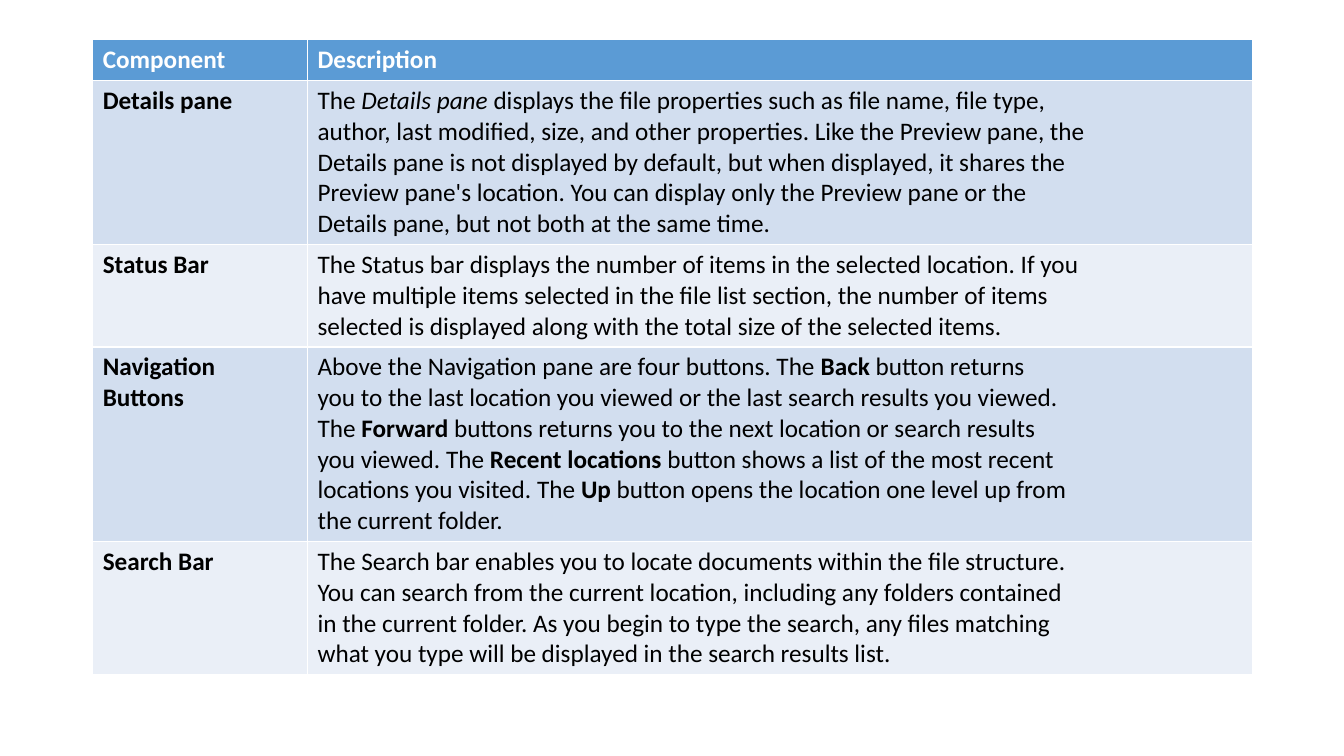
"""Build a slide with a table describing the components of a file window."""
import pptx
import pptx.dml.color
import pptx.util

Inches = pptx.util.Inches


def rgb(value):
    return pptx.dml.color.RGBColor.from_string(value)


def write(cell, text, color="000000", bold=False, emphasis="bold"):
    """Fill a cell line by line, emphasising the parts between asterisks."""
    frame = cell.text_frame
    for line_number, line in enumerate(text.split("\n")):
        paragraph = frame.add_paragraph() if line_number else frame.paragraphs[0]
        for part_number, part in enumerate(line.split("*")):
            if not part:
                continue
            marked = part_number % 2 == 1
            run = paragraph.add_run()
            run.text = part
            run.font.name = "Calibri"
            run.font.size = pptx.util.Pt(18)
            run.font.color.rgb = rgb(color)
            run.font.bold = bold or (marked and emphasis == "bold")
            run.font.italic = marked and emphasis == "italic"


components = [
    ("Details pane", "italic", """\
The *Details pane *displays the file properties such as file name, file type,
author, last modified, size, and other properties. Like the Preview pane, the
Details pane is not displayed by default, but when displayed, it shares the
Preview pane's location. You can display only the Preview pane or the
Details pane, but not both at the same time."""),
    ("Status Bar", "bold", """\
The Status bar displays the number of items in the selected location. If you
have multiple items selected in the file list section, the number of items
selected is displayed along with the total size of the selected items."""),
    ("Navigation Buttons", "bold", """\
Above the Navigation pane are four buttons. The *Back *button returns
you to the last location you viewed or the last search results you viewed.
The *Forward *buttons returns you to the next location or search results
you viewed. The *Recent locations *button shows a list of the most recent
locations you visited. The *Up *button opens the location one level up from
the current folder."""),
    ("Search Bar", "bold", """\
The Search bar enables you to locate documents within the file structure.
You can search from the current location, including any folders contained
in the current folder. As you begin to type the search, any files matching
what you type will be displayed in the search results list."""),
]

presentation = pptx.Presentation()
presentation.slide_width = Inches(13.33)
presentation.slide_height = Inches(7.5)
slide = presentation.slides.add_slide(presentation.slide_layouts[6])

row_count = len(components) + 1
row_height = 0.41
glossary = slide.shapes.add_table(
    row_count, 2, Inches(0.92), Inches(0.39), Inches(11.5), Inches(row_count * row_height)
).table
glossary.columns[0].width = Inches(2.13)
glossary.columns[1].width = Inches(9.37)

for column, heading in enumerate(("Component", "Description")):
    write(glossary.cell(0, column), heading, color="FFFFFF", bold=True)

for row, (component, emphasis, description) in enumerate(components, start=1):
    write(glossary.cell(row, 0), component, bold=True)
    write(glossary.cell(row, 1), description, emphasis=emphasis)

row_fills = ["5B9BD5"] + ["D2DEEF", "EAEFF7"] * 2
for row, row_fill in enumerate(row_fills):
    for cell in glossary.rows[row].cells:
        cell.fill.solid()
        cell.fill.fore_color.rgb = rgb(row_fill)

presentation.save("out.pptx")
